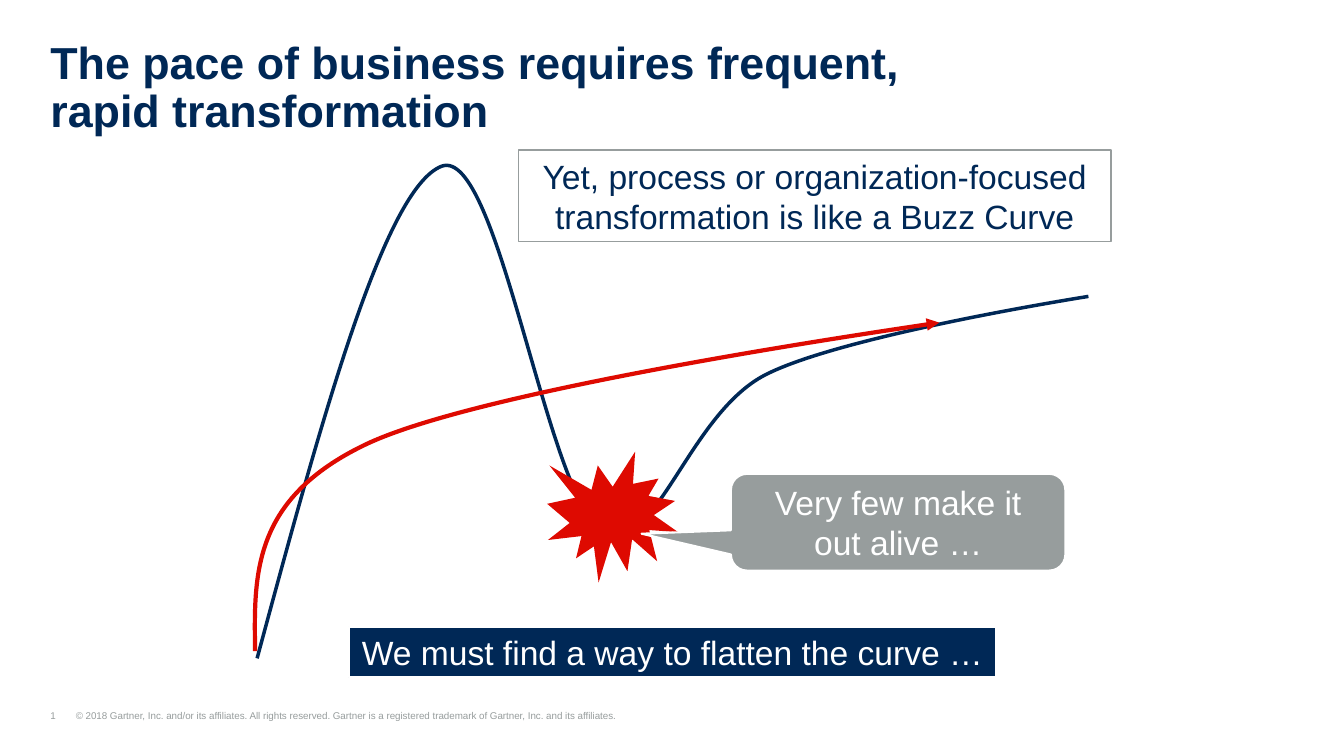
from collections import namedtuple
from dataclasses import dataclass

from lxml.etree import SubElement
from pptx import Presentation
from pptx.dml.color import RGBColor
from pptx.enum.shapes import MSO_SHAPE
from pptx.enum.text import MSO_ANCHOR, PP_ALIGN
from pptx.oxml.ns import qn
from pptx.util import Cm, Pt

Box = namedtuple("Box", "left top width height")


@dataclass(frozen=True)
class Theme:
    navy: RGBColor = RGBColor(0x00, 0x28, 0x56)
    red: RGBColor = RGBColor(0xDE, 0x0A, 0x01)
    grey: RGBColor = RGBColor(0x97, 0x9D, 0x9D)
    white: RGBColor = RGBColor(0xFF, 0xFF, 0xFF)
    font: str = "Arial"
    title: Pt = Pt(32)
    body: Pt = Pt(24)
    footer: Pt = Pt(7)


THEME = Theme()

# Start point, then three points (two handles and an end) for each curve piece
BUZZ_CURVE = [
    (0.13, 12.93),
    (1.73, 7.01), (3.33, 1.09), (4.78, 0.53),
    (6.2, 0), (7.42, 8.79), (8.79, 9.68),
    (10.16, 10.54), (10.97, 6.7), (13.03, 5.74),
    (15.09, 4.75), (21.08, 3.81), (21.08, 3.81),
]
FLAT_CURVE = [
    (0.08, 12.75),
    (0.05, 10.82), (0, 8.91), (2.87, 7.54),
    (5.74, 6.17), (17.32, 4.47), (17.32, 4.47),
]


def set_format(target, values):
    for name, value in values.items():
        setattr(target, name, value)


def within(region, left, top, width, height):
    """Move a box from region coordinates to slide coordinates."""
    return Box(region.left + left, region.top + top, width, height)


def write_text(shape, text, size, color, bold=False, align=PP_ALIGN.LEFT):
    shape.text_frame.text = text
    font_format = {"name": THEME.font, "size": size, "bold": bold}
    for paragraph in shape.text_frame.paragraphs:
        paragraph.alignment = align
        set_format(paragraph.font, font_format)
        paragraph.font.color.rgb = color


def add_text(slide, box, text, size, color, bold=False, anchor=MSO_ANCHOR.TOP):
    shape = slide.shapes.add_textbox(*map(Cm, box))
    set_format(shape.text_frame, {
        "word_wrap": True, "vertical_anchor": anchor,
        "margin_left": 0, "margin_top": 0, "margin_right": 0, "margin_bottom": 0,
    })
    write_text(shape, text, size, color, bold)
    return shape


def add_figure(slide, kind, box, fill, line=None, line_width=1.5):
    shape = slide.shapes.add_shape(kind, *map(Cm, box))
    shape.shadow.inherit = False
    shape.fill.solid()
    shape.fill.fore_color.rgb = fill
    if line is None:
        shape.line.fill.background()
    else:
        shape.line.color.rgb = line
        shape.line.width = Pt(line_width)
    return shape


def add_label(slide, kind, box, text, fill, color, line, line_width=1.5, wrap=True):
    shape = add_figure(slide, kind, box, fill, line, line_width)
    set_format(shape.text_frame,
               {"word_wrap": wrap, "vertical_anchor": MSO_ANCHOR.MIDDLE})
    write_text(shape, text, THEME.body, color, align=PP_ALIGN.CENTER)
    return shape


def add_curve(slide, region, points, color, width, arrow=False):
    """Draw a freeform whose straight segments become Bezier pieces."""
    start, *rest = [(Cm(region.left + x), Cm(region.top + y)) for x, y in points]
    builder = slide.shapes.build_freeform(*start)
    builder.add_line_segments(rest, close=False)
    shape = builder.convert_to_shape()
    shape.shadow.inherit = False
    shape.fill.background()
    shape.line.color.rgb = color
    shape.line.width = Pt(width)

    path = next(shape.element.iter(qn("a:path")))
    segments = path.findall(qn("a:lnTo"))
    for index in range(0, len(segments), 3):
        piece = SubElement(path, qn("a:cubicBezTo"))
        for segment in segments[index:index + 3]:
            piece.append(segment[0])
            path.remove(segment)
    if arrow:
        outline = shape.element.spPr.find(qn("a:ln"))
        SubElement(outline, qn("a:tailEnd"), type="triangle")


def add_title(slide, box):
    shape = add_text(
        slide, box, "The pace of business requires frequent,\vrapid transformation",
        THEME.title, THEME.navy, bold=True)
    shape.text_frame.paragraphs[0].line_spacing = 0.9


def add_diagram(slide, region):
    add_curve(slide, region, BUZZ_CURVE, THEME.navy, 2.5)
    add_label(slide, MSO_SHAPE.RECTANGLE, within(region, 6.71, 0.12, 14.94, 2.31),
              "Yet, process or organization-focused\ntransformation is like a Buzz Curve",
              THEME.white, THEME.navy, THEME.grey, line_width=1)
    add_figure(slide, MSO_SHAPE.EXPLOSION1, within(region, 7.44, 7.72, 3.3, 3.3),
               THEME.red)
    add_curve(slide, region, FLAT_CURVE, THEME.red, 3, arrow=True)
    add_label(slide, MSO_SHAPE.RECTANGLE, within(region, 2.44, 12.14, 16.31, 1.27),
              "We must find a way to flatten the curve …",
              THEME.navy, THEME.white, THEME.white, wrap=False)
    callout = add_label(
        slide, MSO_SHAPE.ROUNDED_RECTANGULAR_CALLOUT,
        within(region, 12.07, 8.28, 8.43, 2.44),
        "Very few make it\vout alive …", THEME.grey, THEME.white, THEME.white)
    for index, value in enumerate((-0.767, 0.119, 0.167)):
        callout.adjustments[index] = value


def add_footer(slide, box):
    shape = add_text(
        slide, box,
        "1\t© 2018 Gartner, Inc. and/or its affiliates. All rights reserved. "
        "Gartner is a registered trademark of Gartner, Inc. and its affiliates.",
        THEME.footer, THEME.grey, anchor=MSO_ANCHOR.BOTTOM)
    properties = shape.text_frame.paragraphs[0]._p.get_or_add_pPr()
    indent = Cm(0.64)
    properties.set("marL", str(indent))
    properties.set("indent", str(-indent))
    tabs = SubElement(properties, qn("a:tabLst"))
    SubElement(tabs, qn("a:tab"), pos=str(indent), algn="l")
    # Tab stops come before the default run format in a paragraph
    properties.insert(0, tabs)


def main():
    presentation = Presentation()
    set_format(presentation, {"slide_width": Cm(33.87), "slide_height": Cm(19.05)})
    slide = presentation.slides.add_slide(presentation.slide_layouts[6])
    add_footer(slide, Box(1.27, 17.88, 19.94, 0.3))
    add_diagram(slide, Box(6.35, 3.66, 21.65, 13.41))
    add_title(slide, Box(1.27, 1.02, 31.32, 1.22))
    presentation.save("out.pptx")


if __name__ == "__main__":
    main()
